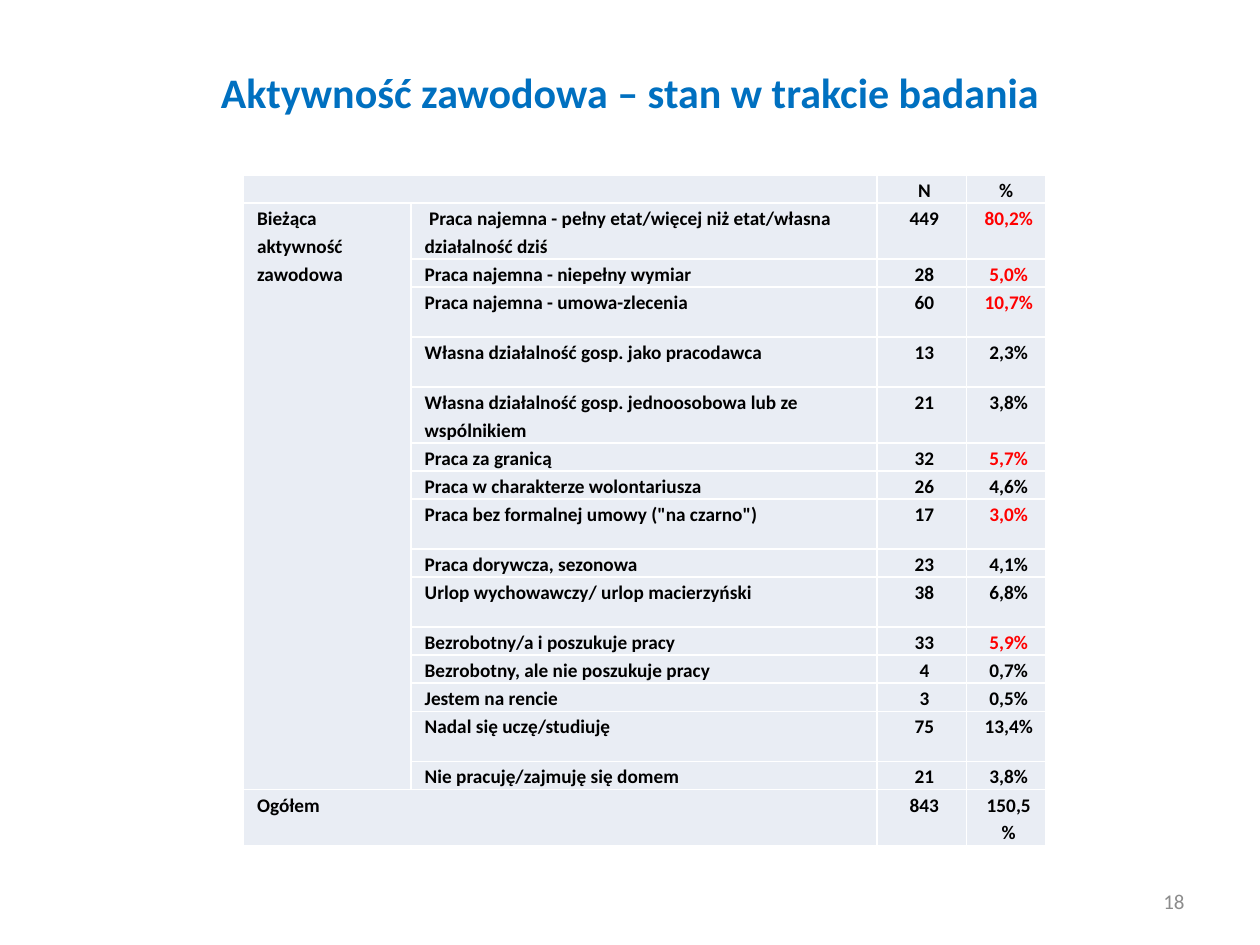
from lxml.etree import SubElement
from pptx import Presentation
from pptx.dml.color import RGBColor
from pptx.enum.text import MSO_ANCHOR, PP_ALIGN
from pptx.oxml.ns import qn
from pptx.util import Pt

BLUE = RGBColor(0x00, 0x70, 0xC0)
BLACK = RGBColor(0x00, 0x00, 0x00)
RED = RGBColor(0xFF, 0x00, 0x00)
GREY = RGBColor(0x8C, 0x8C, 0x8C)
WHITE = RGBColor(0xFF, 0xFF, 0xFF)
PALE = RGBColor(0xE9, 0xED, 0xF4)

FONT = "Calibri"
LINE, TALL = 16, 28.6
COLUMNS = [95.8, 266.4, 51.1, 45.4]
ROWS = [
    (LINE, "", "", "N", "%"),
    (2 * LINE, "Bieżąca aktywność zawodowa",
     " Praca najemna - pełny etat/więcej niż etat/własna działalność dziś", "449", "80,2%"),
    (LINE, "", "Praca najemna - niepełny wymiar", "28", "5,0%"),
    (TALL, "", "Praca najemna - umowa-zlecenia", "60", "10,7%"),
    (TALL, "", "Własna działalność gosp. jako pracodawca", "13", "2,3%"),
    (2 * LINE, "", "Własna działalność gosp. jednoosobowa lub ze wspólnikiem", "21", "3,8%"),
    (LINE, "", "Praca za granicą", "32", "5,7%"),
    (LINE, "", "Praca w charakterze wolontariusza", "26", "4,6%"),
    (TALL, "", 'Praca bez formalnej umowy ("na czarno")', "17", "3,0%"),
    (LINE, "", "Praca dorywcza, sezonowa", "23", "4,1%"),
    (TALL, "", "Urlop wychowawczy/ urlop macierzyński", "38", "6,8%"),
    (LINE, "", "Bezrobotny/a i poszukuje pracy", "33", "5,9%"),
    (LINE, "", "Bezrobotny, ale nie poszukuje pracy", "4", "0,7%"),
    (LINE, "", "Jestem na rencie", "3", "0,5%"),
    (TALL, "", "Nadal się uczę/studiuję", "75", "13,4%"),
    (LINE, "", "Nie pracuję/zajmuję się domem", "21", "3,8%"),
    (2 * LINE, "Ogółem", "", "843", "150,5%"),
]
RED_VALUES = {"80,2%", "5,0%", "10,7%", "5,7%", "3,0%", "5,9%"}


def format_text(tf, size, color, bold, align):
    """Align the paragraphs of a text frame and format their runs."""
    for p in tf.paragraphs:
        p.alignment = align
        for r in p.runs:
            r.font.name = FONT
            r.font.size = Pt(size)
            r.font.bold = bold
            r.font.color.rgb = color


def add_borders(cell):
    """Draw a white one-point line on each side of a cell."""
    tc_pr = cell._tc.get_or_add_tcPr()
    for i, side in enumerate(("lnL", "lnR", "lnT", "lnB")):
        ln = SubElement(tc_pr, qn(f"a:{side}"), w=str(Pt(1)))
        fill = SubElement(ln, qn("a:solidFill"))
        SubElement(fill, qn("a:srgbClr"), val=str(WHITE))
        tc_pr.remove(ln)
        tc_pr.insert(i, ln)


def fill_cell(cell, text, centred):
    """Write and format one table cell."""
    cell.margin_left = cell.margin_right = Pt(4.9)
    cell.margin_top = cell.margin_bottom = 0
    cell.fill.solid()
    cell.fill.fore_color.rgb = PALE
    add_borders(cell)
    tf = cell.text_frame
    tf.text = text
    color = RED if text in RED_VALUES else BLACK
    format_text(tf, 11, color, True, PP_ALIGN.CENTER if centred else PP_ALIGN.LEFT)
    p = tf.paragraphs[0]
    p.line_spacing = 1.15 if text == "%" else Pt(LINE)
    p_pr = p._p.get_or_add_pPr()
    p_pr.set("marL", str(Pt(0 if text == "%" else 3)))
    p_pr.set("indent", "0")
    if not text:
        SubElement(p._p, qn("a:endParaRPr"), sz="1100")


def add_title(s, left, top, width, height):
    """Place the slide title."""
    sp = s.shapes.title
    sp.left, sp.top, sp.width, sp.height = Pt(left), Pt(top), Pt(width), Pt(height)
    sp.text_frame.text = "Aktywność zawodowa – stan w trakcie badania"
    sp.text_frame.vertical_anchor = MSO_ANCHOR.MIDDLE
    format_text(sp.text_frame, 24, BLUE, True, PP_ALIGN.CENTER)


def add_activity_table(s, left, top):
    """Place the table of current occupational activity."""
    height = sum(row[0] for row in ROWS)
    table = s.shapes.add_table(len(ROWS), len(COLUMNS), Pt(left), Pt(top),
                               Pt(sum(COLUMNS)), Pt(height)).table
    table.first_row = table.horz_banding = False
    for column, width in zip(table.columns, COLUMNS):
        column.width = Pt(width)
    for i, (row_height, *texts) in enumerate(ROWS):
        table.rows[i].height = Pt(row_height)
        for j, text in enumerate(texts):
            fill_cell(table.cell(i, j), text, j > 1)
    last = len(ROWS) - 1
    table.cell(0, 0).merge(table.cell(0, 1))
    table.cell(1, 0).merge(table.cell(last - 1, 0))
    table.cell(last, 0).merge(table.cell(last, 1))


def add_page_number(s, left, top, width, height):
    """Place the page number."""
    sp = s.shapes.add_textbox(Pt(left), Pt(top), Pt(width), Pt(height))
    tf = sp.text_frame
    tf.word_wrap = True
    tf.vertical_anchor = MSO_ANCHOR.MIDDLE
    tf.text = "18"
    format_text(tf, 12, GREY, False, PP_ALIGN.RIGHT)


def main():
    """Build and save the slide."""
    prs = Presentation()
    prs.slide_width, prs.slide_height = Pt(720), Pt(540)
    s = prs.slides.add_slide(prs.slide_layouts[5])
    add_title(s, 36, 21.6, 648, 61.2)
    add_activity_table(s, 139, 100)
    add_page_number(s, 516, 500.5, 168, 28.75)
    prs.save("out.pptx")


if __name__ == "__main__":
    main()
